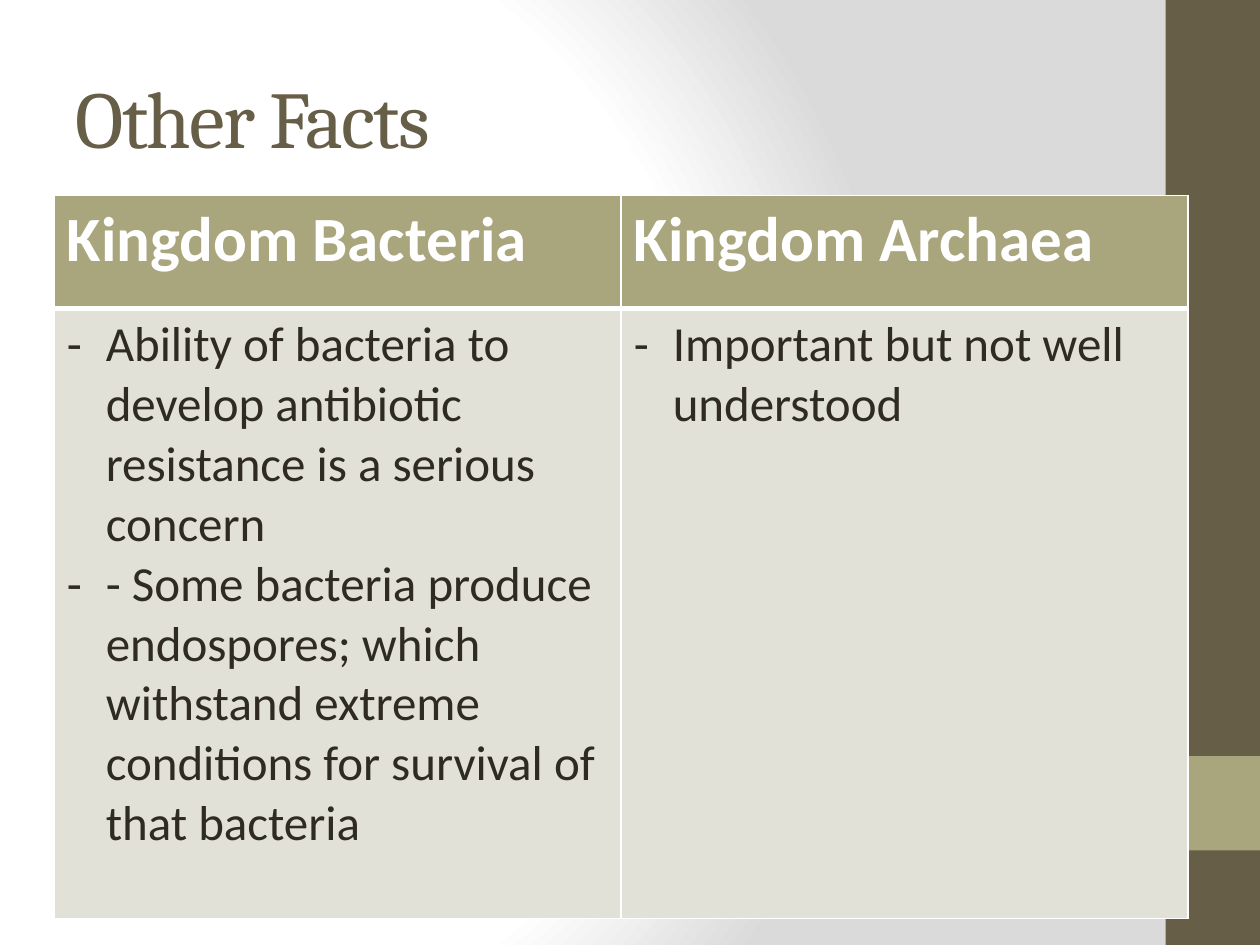
from dataclasses import dataclass

from lxml import etree
from pptx import Presentation
from pptx.dml.color import RGBColor as Rgb
from pptx.enum.shapes import MSO_SHAPE as Shape
from pptx.enum.text import MSO_ANCHOR as Anchor, PP_ALIGN as Align
from pptx.oxml import parse_xml
from pptx.oxml.ns import qn
from pptx.util import Inches, Pt


@dataclass(frozen=True)
class Theme:
    brown: str = "675E47"
    olive: str = "A9A57C"
    pale: str = "E2E1D7"
    ink: str = "2F2B20"
    white: str = "FFFFFF"
    grey: str = "DADADA"
    serif: str = "Cambria"
    sans: str = "Calibri"
    title: int = 46
    head: int = 36
    body: int = 28


THEME = Theme()
NS = 'xmlns:a="http://schemas.openxmlformats.org/drawingml/2006/main"'
HEADS = ["Kingdom Bacteria", "Kingdom Archaea"]
FACTS = [
    ["Ability of bacteria to develop antibiotic resistance is a serious concern",
     "- Some bacteria produce endospores; which withstand extreme conditions "
     "for survival of that bacteria"],
    ["Important but not well understood"],
]


def add_run(para, text, font, size, color, bold=False):
    run = para.add_run()
    run.text = text
    run.font.name = font
    run.font.size = Pt(size)
    run.font.bold = bold
    run.font.color.rgb = Rgb.from_string(color)
    return run


def paint(item, color):
    item.fill.solid()
    item.fill.fore_color.rgb = Rgb.from_string(color)


def set_back(slide):
    """Fill the background with a radial fade from white to grey."""
    fill = slide.background.fill
    fill.solid()
    props = slide.background._cSld.bg.bgPr
    stops = [(0, THEME.white), (75, THEME.white), (100, THEME.grey)]
    marks = "".join(f'<a:gs pos="{pos * 1000}"><a:srgbClr val="{color}"/></a:gs>'
                    for pos, color in stops)
    fade = parse_xml(
        f'<a:gradFill {NS} rotWithShape="1"><a:gsLst>{marks}</a:gsLst>'
        '<a:path path="circle"><a:fillToRect l="20000" t="50000" r="100000" '
        'b="50000"/></a:path></a:gradFill>')
    props.replace(props.find(qn("a:solidFill")), fade)


def add_bar(slide, top, height, color):
    bar = slide.shapes.add_shape(Shape.RECTANGLE, Inches(9.25), Inches(top),
                                 Inches(0.75), Inches(height))
    bar.shadow.inherit = False
    paint(bar, color)
    bar.line.fill.background()


def set_title(slide, text):
    title = slide.shapes.title
    title.left, title.top = Inches(0.5), Inches(0.3)
    title.width, title.height = Inches(8.33), Inches(1.25)
    frame = title.text_frame
    frame.word_wrap = True
    frame.vertical_anchor = Anchor.MIDDLE
    para = frame.paragraphs[0]
    para.alignment = Align.LEFT
    run = add_run(para, text, THEME.serif, THEME.title, THEME.brown)
    run.font._element.set("spc", "-100")


def set_edges(cell, top, base):
    """Draw white borders: 1 pt at the sides, given widths above and below."""
    props = cell._tc.get_or_add_tcPr()
    edges = [("lnL", 1), ("lnR", 1), ("lnT", top), ("lnB", base)]
    for spot, (tag, width) in enumerate(edges):
        props.insert(spot, parse_xml(
            f'<a:{tag} {NS} w="{Pt(width)}"><a:solidFill>'
            f'<a:srgbClr val="{THEME.white}"/></a:solidFill></a:{tag}>'))


def add_dash(para):
    props = para._p.get_or_add_pPr()
    props.set("marL", str(Inches(0.31)))
    props.set("indent", str(-Inches(0.31)))
    etree.SubElement(props, qn("a:buFont")).set("typeface", THEME.sans)
    etree.SubElement(props, qn("a:buChar")).set("char", "-")


def fill_head(cell, text):
    paint(cell, THEME.olive)
    set_edges(cell, 1, 3)
    add_run(cell.text_frame.paragraphs[0], text, THEME.sans, THEME.head,
            THEME.white, True)


def fill_body(cell, facts):
    paint(cell, THEME.pale)
    set_edges(cell, 3, 1)
    frame = cell.text_frame
    for spot, fact in enumerate(facts):
        para = frame.add_paragraph() if spot else frame.paragraphs[0]
        add_dash(para)
        add_run(para, fact, THEME.sans, THEME.body, THEME.ink)


def add_grid(slide):
    rows = [0.9, 4.84]
    grid = slide.shapes.add_table(2, len(HEADS), Inches(0.43), Inches(1.55),
                                  Inches(9), Inches(sum(rows))).table
    for row, height in zip(grid.rows, rows):
        row.height = Inches(height)
    for col, (head, facts) in enumerate(zip(HEADS, FACTS)):
        fill_head(grid.cell(0, col), head)
        fill_body(grid.cell(1, col), facts)


def main():
    deck = Presentation()
    deck.slide_width, deck.slide_height = Inches(10), Inches(7.5)
    slide = deck.slides.add_slide(deck.slide_layouts[5])
    set_back(slide)
    add_bar(slide, 0, 7.5, THEME.brown)
    add_bar(slide, 6, 0.75, THEME.olive)
    set_title(slide, "Other Facts")
    add_grid(slide)
    deck.save("out.pptx")


if __name__ == "__main__":
    main()
